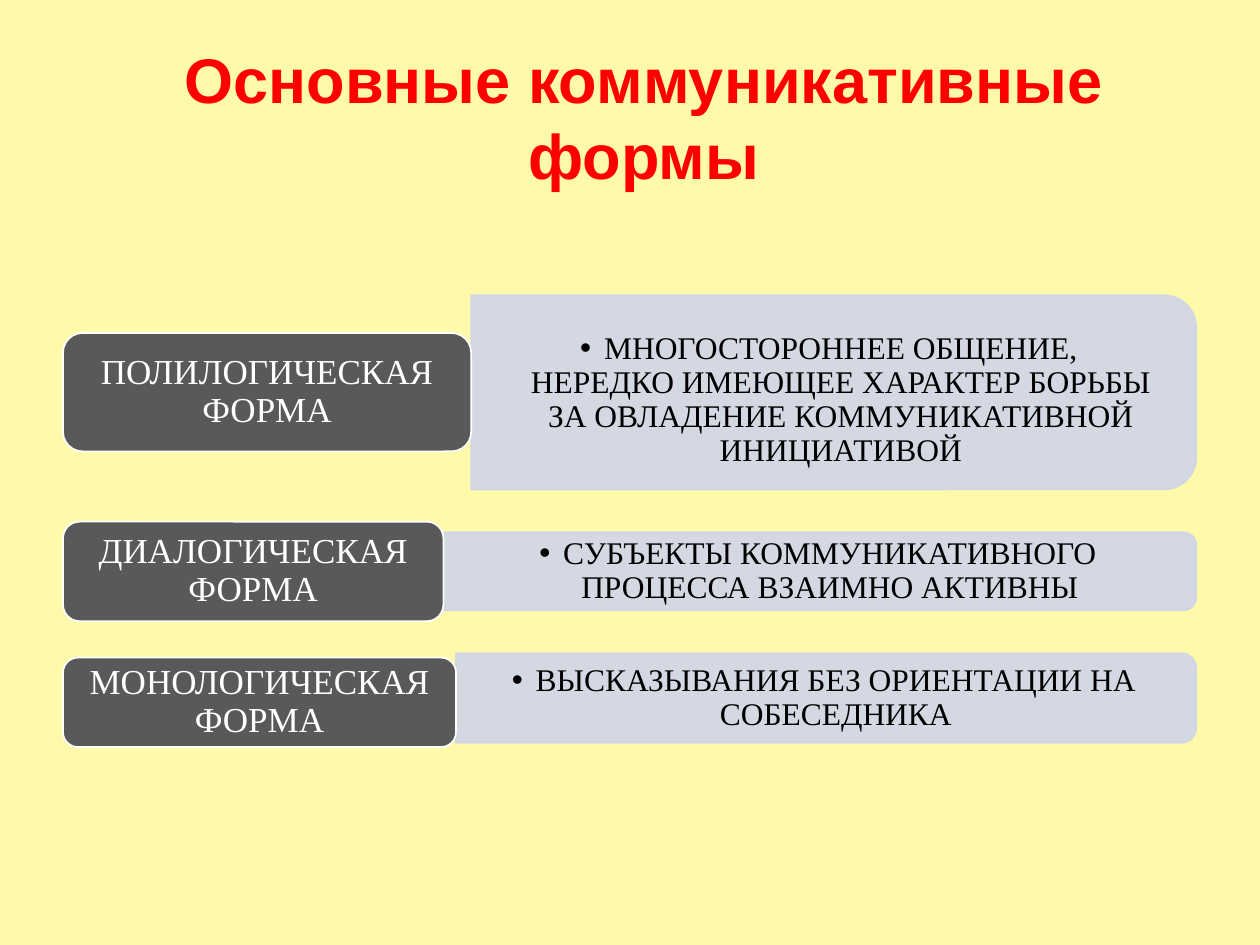
import pptx
import pptx.dml.color
import pptx.enum.shapes
import pptx.enum.text
import pptx.oxml.ns
import pptx.util
from lxml import etree

Pt = pptx.util.Pt
RGBColor = pptx.dml.color.RGBColor
MSO_SHAPE = pptx.enum.shapes.MSO_SHAPE
PP_ALIGN = pptx.enum.text.PP_ALIGN
MSO_ANCHOR = pptx.enum.text.MSO_ANCHOR
qn = pptx.oxml.ns.qn

CREAM = RGBColor(0xFF, 0xFA, 0xA9)
RED = RGBColor(0xFF, 0x00, 0x00)
PALE_BLUE = RGBColor(0xCF, 0xD5, 0xEA)
GRAY = RGBColor(0x59, 0x59, 0x59)
WHITE = RGBColor(0xFF, 0xFF, 0xFF)
BLACK = RGBColor(0x00, 0x00, 0x00)

LEFT, RIGHT = 36, 683.6
CORNER_INSET = 0.05
BULLET_INDENT = 13.7

ROWS = [
    dict(label="ПОЛИЛОГИЧЕСКАЯ ФОРМА",
         text="МНОГОСТОРОННЕЕ ОБЩЕНИЕ, НЕРЕДКО ИМЕЮЩЕЕ ХАРАКТЕР БОРЬБЫ "
              "ЗА ОВЛАДЕНИЕ КОММУНИКАТИВНОЙ ИНИЦИАТИВОЙ",
         width=233.3, label_y=(190.3, 67.7), panel_y=(168.8, 110.9), shift=4.5),
    dict(label="ДИАЛОГИЧЕСКАЯ ФОРМА",
         text="СУБЪЕКТЫ КОММУНИКАТИВНОГО ПРОЦЕССА ВЗАИМНО АКТИВНЫ",
         width=217.4, label_y=(298.1, 56.9), panel_y=(304.2, 44.6), shift=0),
    dict(label="МОНОЛОГИЧЕСКАЯ ФОРМА",
         text="ВЫСКАЗЫВАНИЯ БЕЗ ОРИЕНТАЦИИ НА СОБЕСЕДНИКА",
         width=224.6, label_y=(375.8, 51.1), panel_y=(373.3, 51.1), shift=0),
]


class Deck:
    title_font = dict(name="Arial", size=Pt(36), bold=True)
    label_font = dict(name="Times New Roman", size=Pt(20))
    body_font = dict(name="Times New Roman", size=Pt(18))
    label_para = dict(alignment=PP_ALIGN.CENTER, line_spacing=0.9, space_after=Pt(7))
    body_para = dict(alignment=PP_ALIGN.CENTER, line_spacing=0.9, space_after=Pt(2.7))

    def __init__(self):
        self.prs = pptx.Presentation()
        self.prs.slide_width, self.prs.slide_height = Pt(720), Pt(540)
        self.s = self.prs.slides.add_slide(self.prs.slide_layouts[5])
        fill = self.s.background.fill
        fill.solid()
        fill.fore_color.rgb = CREAM

    def apply(self, obj, values):
        for name, value in values.items():
            setattr(obj, name, value)

    def set_text(self, tf, text, para, font, color, margins):
        mx, my = margins
        self.apply(tf, dict(word_wrap=True, vertical_anchor=MSO_ANCHOR.MIDDLE,
                            margin_left=Pt(mx), margin_right=Pt(mx),
                            margin_top=Pt(my), margin_bottom=Pt(my)))
        p = tf.paragraphs[0]
        self.apply(p, para)
        r = p.add_run()
        r.text = text
        self.apply(r.font, font)
        r.font.color.rgb = color
        return p

    def title(self, text, x, y, w, h):
        sp = self.s.shapes.title
        self.apply(sp, dict(left=Pt(x), top=Pt(y), width=Pt(w), height=Pt(h)))
        self.set_text(sp.text_frame, text, dict(alignment=PP_ALIGN.CENTER),
                      self.title_font, RED, (7.2, 3.6))

    def shape(self, kind, x, y, w, h, fill, line):
        sp = self.s.shapes.add_shape(kind, Pt(x), Pt(y), Pt(w), Pt(h))
        sp.shadow.inherit = False
        sp.fill.solid()
        sp.fill.fore_color.rgb = fill
        sp.line.color.rgb = line
        sp.line.width = Pt(1)
        return sp

    def panel(self, x, y, w, h):
        sp = self.shape(MSO_SHAPE.ROUND_2_SAME_RECTANGLE, x + (w - h) / 2,
                        y + (h - w) / 2, h, w, PALE_BLUE, PALE_BLUE)
        sp.rotation = 90
        for color in sp._element.spPr.iter(qn("a:srgbClr")):
            etree.SubElement(color, qn("a:alpha"), val="90000")

    def bullet_text(self, text, x, y, w, h):
        sp = self.s.shapes.add_textbox(Pt(x), Pt(y), Pt(w), Pt(h))
        p = self.set_text(sp.text_frame, text, self.body_para, self.body_font,
                          BLACK, (19.2, 0))
        pPr = p._p.get_or_add_pPr()
        pPr.set("marL", str(Pt(BULLET_INDENT)))
        pPr.set("indent", str(-Pt(BULLET_INDENT)))
        etree.SubElement(pPr, qn("a:buFont"), typeface="Arial")
        etree.SubElement(pPr, qn("a:buChar"), char="•")

    def label(self, text, x, y, w, h):
        sp = self.shape(MSO_SHAPE.ROUNDED_RECTANGLE, x, y, w, h, GRAY, WHITE)
        self.set_text(sp.text_frame, text, self.label_para, self.label_font,
                      WHITE, (6, 3))

    def row(self, label, text, width, label_y, panel_y, shift):
        x = LEFT + width
        w = RIGHT - x
        top, height = panel_y
        self.panel(x, top, w, height)
        self.bullet_text(text, x, top + shift, w - CORNER_INSET * height, height)
        self.label(label, LEFT, label_y[0], width, label_y[1])


def main():
    deck = Deck()
    deck.title("Основные коммуникативные формы", 36, 21.6, 663.8, 90)
    for row in ROWS:
        deck.row(**row)
    deck.prs.save("out.pptx")


if __name__ == "__main__":
    main()
